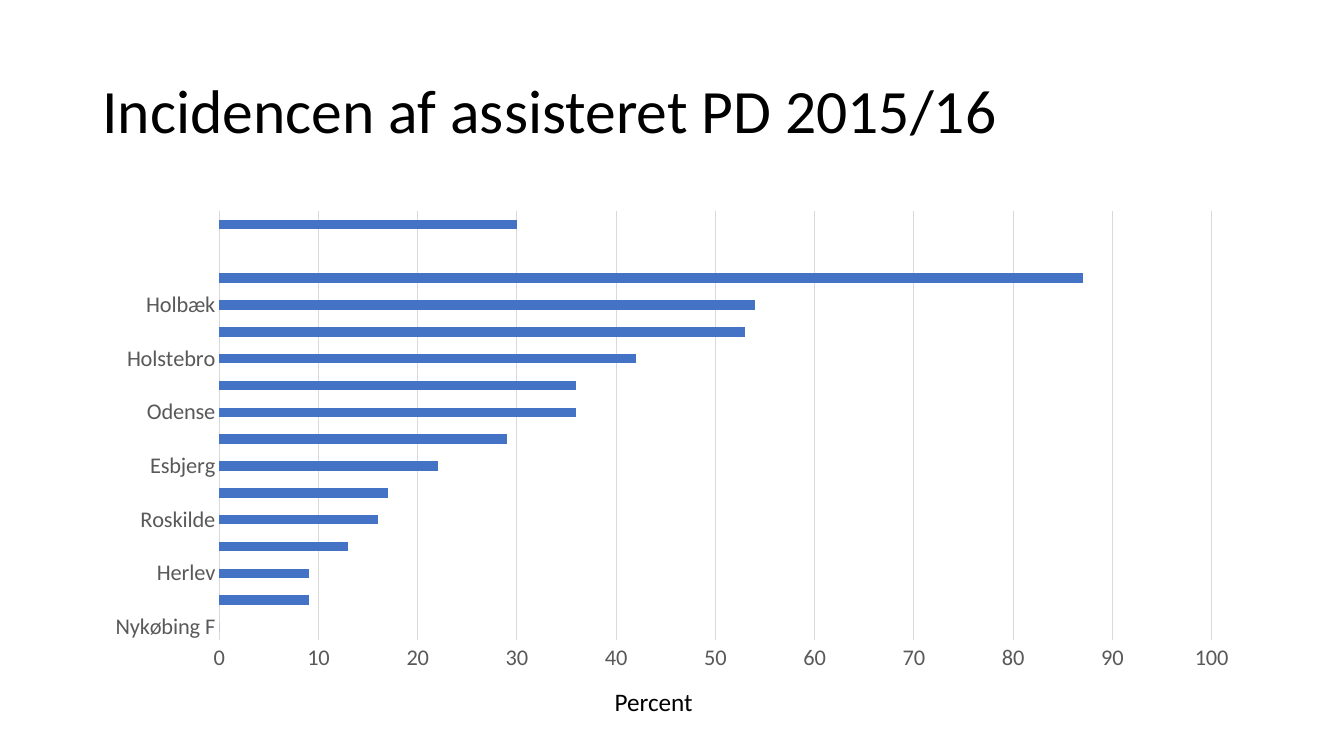
from pptx import Presentation
from pptx.chart.data import CategoryChartData
from pptx.dml.color import RGBColor
from pptx.enum.chart import XL_CHART_TYPE, XL_TICK_MARK
from pptx.enum.text import MSO_ANCHOR, MSO_AUTO_SIZE, PP_ALIGN
from pptx.util import Cm, Pt

COLOURS = {
    "text": "000000",
    "label": "595959",
    "grid": "D9D9D9",
    "bar": "4472C4",
}

UNIT = "Percent"

INCIDENCE = [
    ("Nykøbing F", 0),
    ("", 9),
    ("Herlev", 9),
    ("", 13),
    ("Roskilde", 16),
    ("", 17),
    ("Esbjerg", 22),
    ("", 29),
    ("Odense", 36),
    ("", 36),
    ("Holstebro", 42),
    ("", 53),
    ("Holbæk", 54),
    ("", 87),
    ("", None),
    ("", 30),
]


class SlideBuilder:
    font_name = "Calibri"

    def __init__(self, slide):
        self.slide = slide

    def style_font(self, font, size, colour):
        font.name = self.font_name
        font.size = Pt(size)
        font.bold = False
        font.color.rgb = RGBColor.from_string(COLOURS[colour])

    def style_line(self, line):
        line.color.rgb = RGBColor.from_string(COLOURS["grid"])
        line.width = Pt(0.75)

    def title(self, wording, left, top, width, height):
        heading = self.slide.shapes.title
        heading.left, heading.top = Cm(left), Cm(top)
        heading.width, heading.height = Cm(width), Cm(height)
        frame = heading.text_frame
        frame.text = wording
        frame.auto_size = MSO_AUTO_SIZE.NONE
        frame.vertical_anchor = MSO_ANCHOR.MIDDLE
        paragraph = frame.paragraphs[0]
        paragraph.alignment = PP_ALIGN.LEFT
        paragraph.line_spacing = 0.9
        self.style_font(paragraph.runs[0].font, 44, "text")

    def caption(self, wording, left, top, width, height):
        box = self.slide.shapes.add_textbox(Cm(left), Cm(top), Cm(width), Cm(height))
        frame = box.text_frame
        frame.text = wording
        frame.word_wrap = False
        frame.auto_size = MSO_AUTO_SIZE.SHAPE_TO_FIT_TEXT
        self.style_font(frame.paragraphs[0].runs[0].font, 18, "text")

    def bar_chart(self, rows, left, top, width, height):
        data = CategoryChartData(number_format="0")
        data.categories = [hospital for hospital, _ in rows]
        data.add_series(UNIT, [percent for _, percent in rows])
        chart = self.slide.shapes.add_chart(
            XL_CHART_TYPE.BAR_CLUSTERED,
            Cm(left), Cm(top), Cm(width), Cm(height), data,
        ).chart
        chart.has_legend = False
        chart.has_title = False
        self.style_font(chart.font, 10, "text")

        plot = chart.plots[0]
        plot.gap_width = 182
        plot.vary_by_categories = False
        bars = plot.series[0].format.fill
        bars.solid()
        bars.fore_color.rgb = RGBColor.from_string(COLOURS["bar"])

        hospitals, percent = chart.category_axis, chart.value_axis
        for axis in (hospitals, percent):
            axis.major_tick_mark = XL_TICK_MARK.NONE
            axis.minor_tick_mark = XL_TICK_MARK.NONE
            self.style_font(axis.tick_labels.font, 16, "label")
        hospitals.has_major_gridlines = False
        self.style_line(hospitals.format.line)
        percent.minimum_scale, percent.maximum_scale = 0, 100
        percent.major_unit = 10
        percent.tick_labels.number_format = "0"
        percent.tick_labels.number_format_is_linked = False
        percent.format.line.fill.background()
        percent.has_major_gridlines = True
        self.style_line(percent.major_gridlines.format.line)


def main():
    presentation = Presentation()
    presentation.slide_width = Cm(33.87)
    presentation.slide_height = Cm(19.05)
    title_only = presentation.slide_layouts[5]
    builder = SlideBuilder(presentation.slides.add_slide(title_only))
    builder.title("Incidencen af assisteret PD 2015/16", 2.33, 1.01, 29.21, 3.68)
    builder.bar_chart(INCIDENCE, 2.33, 5.08, 29.21, 12.09)
    builder.caption(UNIT, 15.24, 17.17, 2.51, 1.03)
    presentation.save("out.pptx")


if __name__ == "__main__":
    main()
